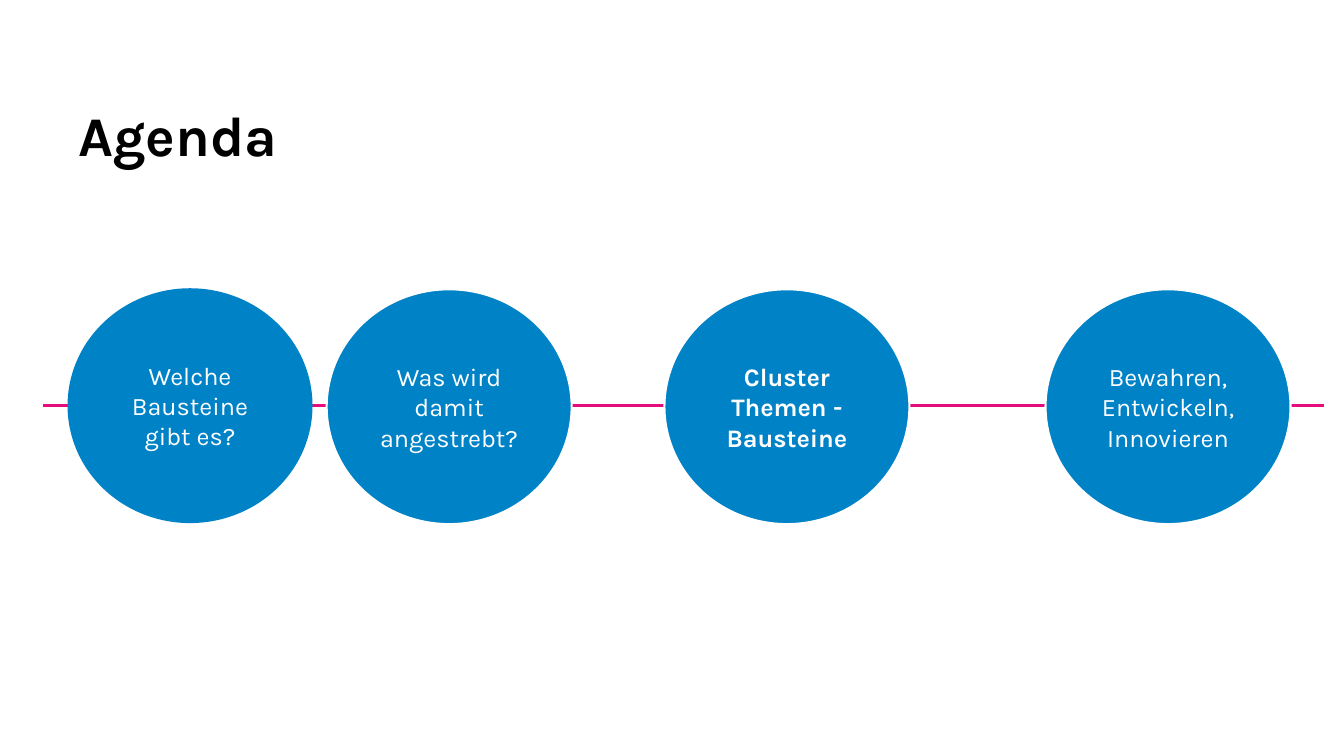
from dataclasses import dataclass

from lxml.etree import SubElement
from pptx import Presentation
from pptx.dml.color import RGBColor as RGB
from pptx.enum.shapes import MSO_CONNECTOR, MSO_SHAPE
from pptx.enum.text import MSO_ANCHOR as Anchor, PP_ALIGN as Align
from pptx.oxml.ns import qn
from pptx.slide import Slide
from pptx.text.text import TextFrame
from pptx.util import Inches, Pt


@dataclass(frozen=True)
class Theme:
    font: str = "Karla"
    black: RGB = RGB(0x00, 0x00, 0x00)
    white: RGB = RGB(0xFF, 0xFF, 0xFF)
    blue: RGB = RGB(0x00, 0x82, 0xC7)
    pink: RGB = RGB(0xE5, 0x0D, 0x7E)
    title_size: int = 40
    topic_size: int = 18


@dataclass(frozen=True)
class Topic:
    text: str
    left: float
    top: float = 2.87
    bold: bool = False
    outlined: bool = True


THEME = Theme()
TOPIC_WIDTH, TOPIC_HEIGHT = 2.43, 2.33
TOPICS = (
    Topic("Welche Bausteine gibt es?", 0.67, top=2.86, outlined=False),
    Topic("Was wird damit angestrebt?", 3.24),
    Topic("Cluster Themen - Bausteine", 6.59, bold=True),
    Topic("Bewahren, Entwickeln, Innovieren", 10.37),
)


def write(tf: TextFrame, text: str, size: int, color: RGB, bold: bool) -> None:
    tf.word_wrap = True
    tf.text = text
    font = tf.paragraphs[0].runs[0].font
    font.name, font.size, font.bold = THEME.font, Pt(size), bold
    font.color.rgb = color


def add_title(s: Slide, text: str) -> None:
    tf = s.shapes.add_textbox(
        Inches(0.68), Inches(1.02), Inches(12.2), Inches(1.83)
    ).text_frame
    write(tf, text, THEME.title_size, THEME.black, True)
    tf.paragraphs[0].line_spacing = 0.9


def add_timeline(s: Slide, left: float, right: float, y: float) -> None:
    line = s.shapes.add_connector(
        MSO_CONNECTOR.STRAIGHT, Inches(left), Inches(y), Inches(right), Inches(y)
    )
    line.line.color.rgb = THEME.pink
    line.line.width = Pt(2.25)
    SubElement(line._element.spPr, qn("a:effectLst"))


def add_topic(s: Slide, topic: Topic) -> None:
    sp = s.shapes.add_shape(
        MSO_SHAPE.OVAL, Inches(topic.left), Inches(topic.top),
        Inches(TOPIC_WIDTH), Inches(TOPIC_HEIGHT),
    )
    sp.shadow.inherit = False
    sp.fill.solid()
    sp.fill.fore_color.rgb = THEME.blue
    if topic.outlined:
        sp.line.color.rgb = THEME.white
        sp.line.width = Pt(1.5)
    else:
        sp.line.fill.background()
    tf = sp.text_frame
    write(tf, topic.text, THEME.topic_size, THEME.white, topic.bold)
    tf.vertical_anchor = Anchor.MIDDLE
    tf.paragraphs[0].alignment = Align.CENTER


def main() -> None:
    prs = Presentation()
    prs.slide_width, prs.slide_height = Inches(13.33), Inches(7.5)
    s = prs.slides.add_slide(prs.slide_layouts[6])
    add_title(s, "Agenda")
    add_timeline(s, 0.43, 13.13, 4.02)
    for topic in TOPICS:
        add_topic(s, topic)
    prs.save("out.pptx")


if __name__ == "__main__":
    main()
